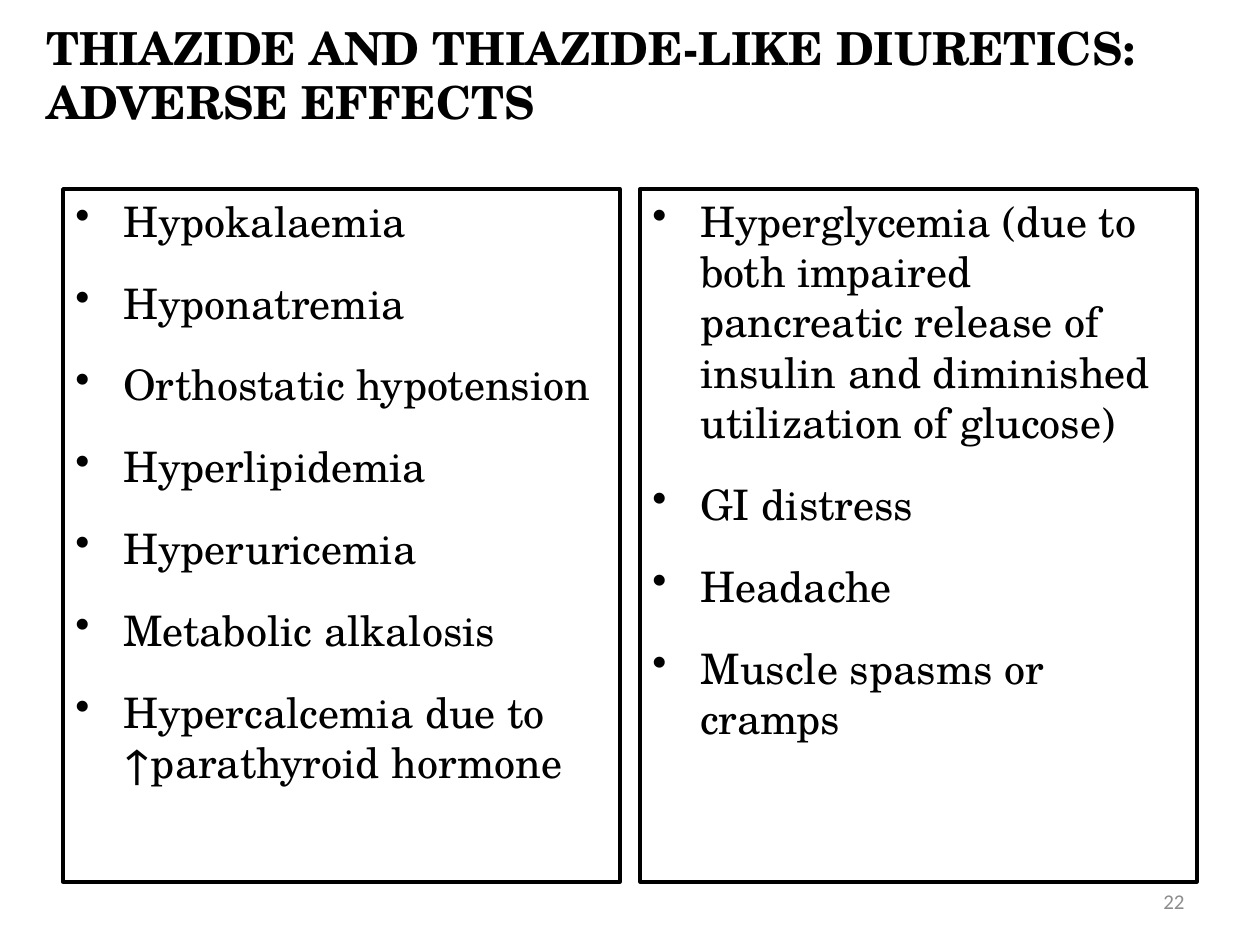
from lxml import etree
from pptx import Presentation
from pptx import util as u
from pptx.dml.color import RGBColor
from pptx.enum import shapes, text
from pptx.oxml import ns

BLACK = RGBColor(0x00, 0x00, 0x00)
WHITE = RGBColor(0xFF, 0xFF, 0xFF)
GREY = RGBColor(0x8C, 0x8C, 0x8C)
SERIF = "TeX Gyre Schola"
SANS = "Calibri"

LEFT = [
    "Hypokalaemia",
    "Hyponatremia",
    "Orthostatic hypotension",
    "Hyperlipidemia",
    "Hyperuricemia",
    "Metabolic alkalosis",
    "Hypercalcemia due to ↑parathyroid hormone",
]
RIGHT = [
    "Hyperglycemia (due to both impaired pancreatic release of insulin "
    "and diminished utilization of glucose)",
    "GI distress",
    "Headache",
    "Muscle spasms or cramps",
]


class Page:
    def __init__(self, deck):
        self.slide = deck.slides.add_slide(deck.slide_layouts[6])

    def style(self, para, size, name=SERIF, color=BLACK, bold=False):
        font = para.font
        font.size = u.Pt(size)
        font.name = name
        font.color.rgb = color
        font.bold = bold

    def label(self, words, box, size, align=text.PP_ALIGN.LEFT, **look):
        frame = self.slide.shapes.add_textbox(*map(u.Inches, box)).text_frame
        frame.word_wrap = True
        frame.vertical_anchor = text.MSO_ANCHOR.MIDDLE
        para = frame.paragraphs[0]
        para.text = words
        para.alignment = align
        self.style(para, size, **look)

    def bullet(self, para):
        """Add a round bullet with a hanging indent."""
        props = para._p.get_or_add_pPr()
        indent = u.Inches(0.38)
        props.set("marL", str(indent))
        props.set("indent", str(-indent))
        etree.SubElement(props, ns.qn("a:buChar")).set("char", "•")

    def panel(self, items, box):
        shape = self.slide.shapes.add_shape(
            shapes.MSO_SHAPE.RECTANGLE, *map(u.Inches, box))
        shape.shadow.inherit = False
        shape.fill.solid()
        shape.fill.fore_color.rgb = WHITE
        shape.line.color.rgb = BLACK
        shape.line.width = u.Pt(2)
        frame = shape.text_frame
        frame.word_wrap = True
        frame.vertical_anchor = text.MSO_ANCHOR.TOP
        for i, item in enumerate(items):
            para = frame.add_paragraph() if i else frame.paragraphs[0]
            para.text = item
            para.alignment = text.PP_ALIGN.LEFT
            para.space_before = u.Pt(18 if i else 0)
            self.bullet(para)
            self.style(para, 24)


def main():
    deck = Presentation()
    deck.slide_width, deck.slide_height = u.Inches(10), u.Inches(7.5)
    page = Page(deck)
    page.label("THIAZIDE AND THIAZIDE-LIKE DIURETICS: ADVERSE EFFECTS",
               (0.27, 0.13, 9.5, 0.92), 26, bold=True)
    for x, items in ((0.5, LEFT), (5.08, RIGHT)):
        page.panel(items, (x, 1.5, 4.42, 5.5))
    page.label("22", (7.17, 6.95, 2.33, 0.4), 12, text.PP_ALIGN.RIGHT,
               name=SANS, color=GREY)
    deck.save("out.pptx")


if __name__ == "__main__":
    main()
